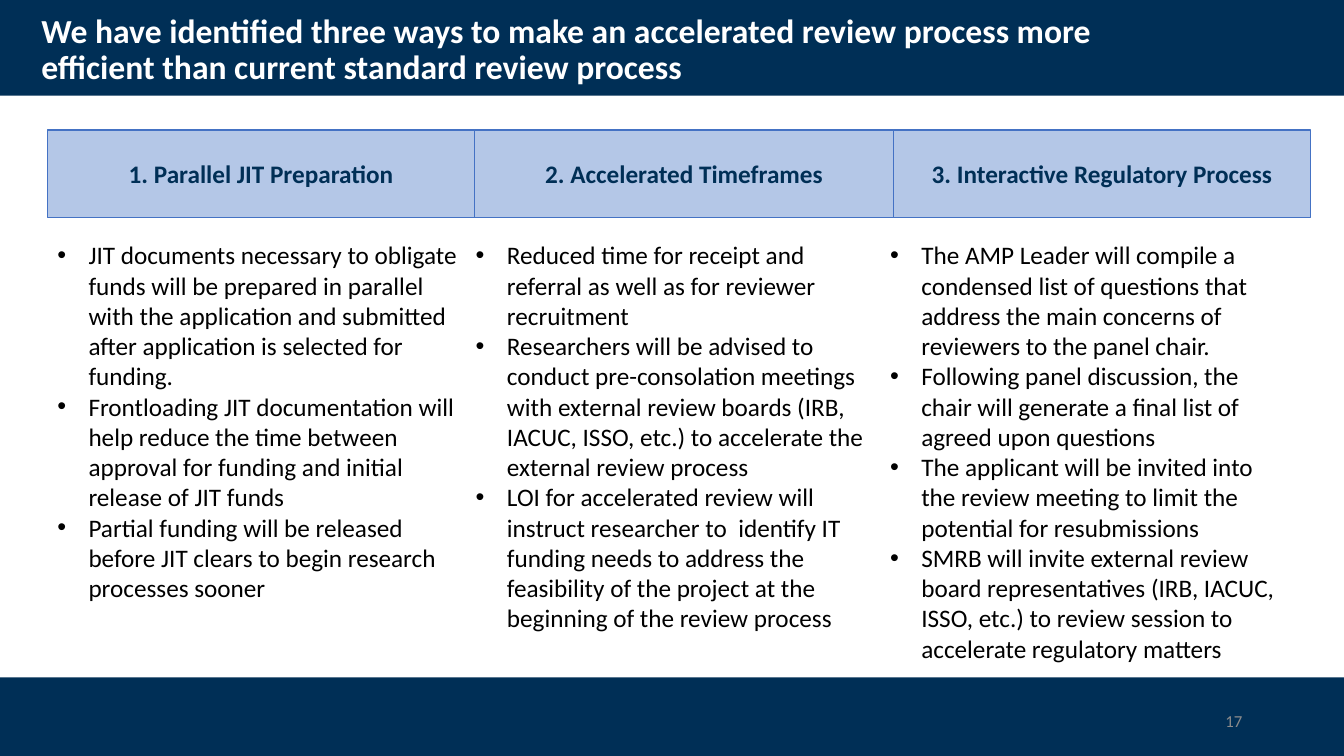
"""Build the slide on three ways to make accelerated review more efficient."""
from lxml import etree
from pptx import Presentation, util as u
from pptx.dml.color import RGBColor
from pptx.enum import shapes, text
from pptx.oxml import ns

HUES = {"navy": "002F56", "pale": "B4C7E7", "edge": "4472C4",
        "white": "FFFFFF", "black": "000000", "gray": "8C8C8C"}
KINDS = shapes.MSO_SHAPE
ALIGN = text.PP_ALIGN
STEPS = [
    ("1. Parallel JIT Preparation", KINDS.PENTAGON, (0.47, 4.24), (0.47, 4.24), [
        "JIT documents necessary to obligate funds will be prepared in parallel with the application and submitted after application is selected for funding.",
        "Frontloading JIT documentation will help reduce the time between approval for funding and initial release of JIT funds",
        "Partial funding will be released before JIT clears to begin research processes sooner"]),
    ("2. Accelerated Timeframes", KINDS.CHEVRON, (4.71, 4.15), (4.62, 4.05), [
        "Reduced time for receipt and referral as well as for reviewer recruitment",
        "Researchers will be advised to conduct pre-consolation meetings with external review boards (IRB, IACUC, ISSO, etc.) to accelerate the external review process",
        "LOI for accelerated review will instruct researcher to  identify IT funding needs to address the feasibility of the project at the beginning of the review process"]),
    ("3. Interactive Regulatory Process", KINDS.CHEVRON, (8.86, 4.14), (8.73, 4.14), [
        "The AMP Leader will compile a condensed list of questions that address the main concerns of reviewers to the panel chair.",
        "Following panel discussion, the chair will generate a final list of agreed upon questions",
        "The applicant will be invited into the review meeting to limit the potential for resubmissions",
        "SMRB will invite external review board representatives (IRB, IACUC, ISSO, etc.) to review session to accelerate regulatory matters"]),
]


def tint(name):
    """Return the named colour."""
    return RGBColor.from_string(HUES[name])


def place(box):
    """Turn left, top, width and height into lengths."""
    return [u.Inches(n) for n in box]


def dot(para):
    """Give a paragraph a hanging round bullet."""
    props = para._p.get_or_add_pPr()
    props.set("marL", str(u.Inches(0.31)))
    props.set("indent", str(-u.Inches(0.31)))
    etree.SubElement(props, ns.qn("a:buFont"), typeface="Arial")
    etree.SubElement(props, ns.qn("a:buChar"), char="•")


def write(shape, *lines, size=18, hue="black", bold=False, align=ALIGN.LEFT,
          anchor=text.MSO_ANCHOR.MIDDLE, gap=None, dots=False):
    """Fill a shape with formatted paragraphs."""
    frame = shape.text_frame
    frame.word_wrap = True
    frame.auto_size = text.MSO_AUTO_SIZE.NONE
    frame.vertical_anchor = anchor
    for i, line in enumerate(lines):
        para = frame.add_paragraph() if i else frame.paragraphs[0]
        para.text = line
        para.alignment = align
        if gap:
            para.line_spacing = gap
        if dots:
            dot(para)
        font = para.font
        font.name, font.size, font.bold = "Calibri", u.Pt(size), bold
        font.color.rgb = tint(hue)


def block(slide, kind, box, fill, edge=None):
    """Add a flat filled shape, with an outline if one is named."""
    shape = slide.shapes.add_shape(kind, *place(box))
    shape.shadow.inherit = False
    shape.fill.solid()
    shape.fill.fore_color.rgb = tint(fill)
    if edge:
        shape.line.color.rgb = tint(edge)
        shape.line.width = u.Pt(0.75)
    else:
        shape.line.fill.background()
    return shape


def head(slide, label):
    """Place the title above the bands."""
    title = slide.shapes.title
    title.left, title.top, title.width, title.height = place((0.31, 0.18, 11.5, 0.64))
    write(title, label, size=24, hue="white", bold=True, gap=0.9)
    slide.shapes._spTree.append(title._element)


def step(slide, label, kind, span, body, points):
    """Add one column: a header shape and its bullets."""
    top = block(slide, kind, (span[0], 1.29, span[1], 0.87), "pale", "edge")
    top.adjustments[0] = 0
    write(top, label, hue="navy", bold=True, align=ALIGN.CENTER)
    notes = slide.shapes.add_textbox(*place((body[0], 2.33, body[1], 4.3)))
    write(notes, *points, anchor=text.MSO_ANCHOR.TOP, dots=True)


def main():
    """Build and save the slide."""
    deck = Presentation()
    deck.slide_width, deck.slide_height = u.Inches(13.33), u.Inches(7.5)
    slide = deck.slides.add_slide(deck.slide_layouts[5])
    for top, high in ((0, 0.95), (6.72, 0.78)):
        block(slide, KINDS.RECTANGLE, (0, top, 13.33, high), "navy")
    head(slide, "We have identified three ways to make an accelerated review process "
                "more efficient than current standard review process")
    for item in STEPS:
        step(slide, *item)
    page = slide.shapes.add_textbox(*place((9.42, 6.95, 3, 0.4)))
    write(page, "17", size=12, hue="gray", align=ALIGN.RIGHT)
    deck.save("out.pptx")


if __name__ == "__main__":
    main()
